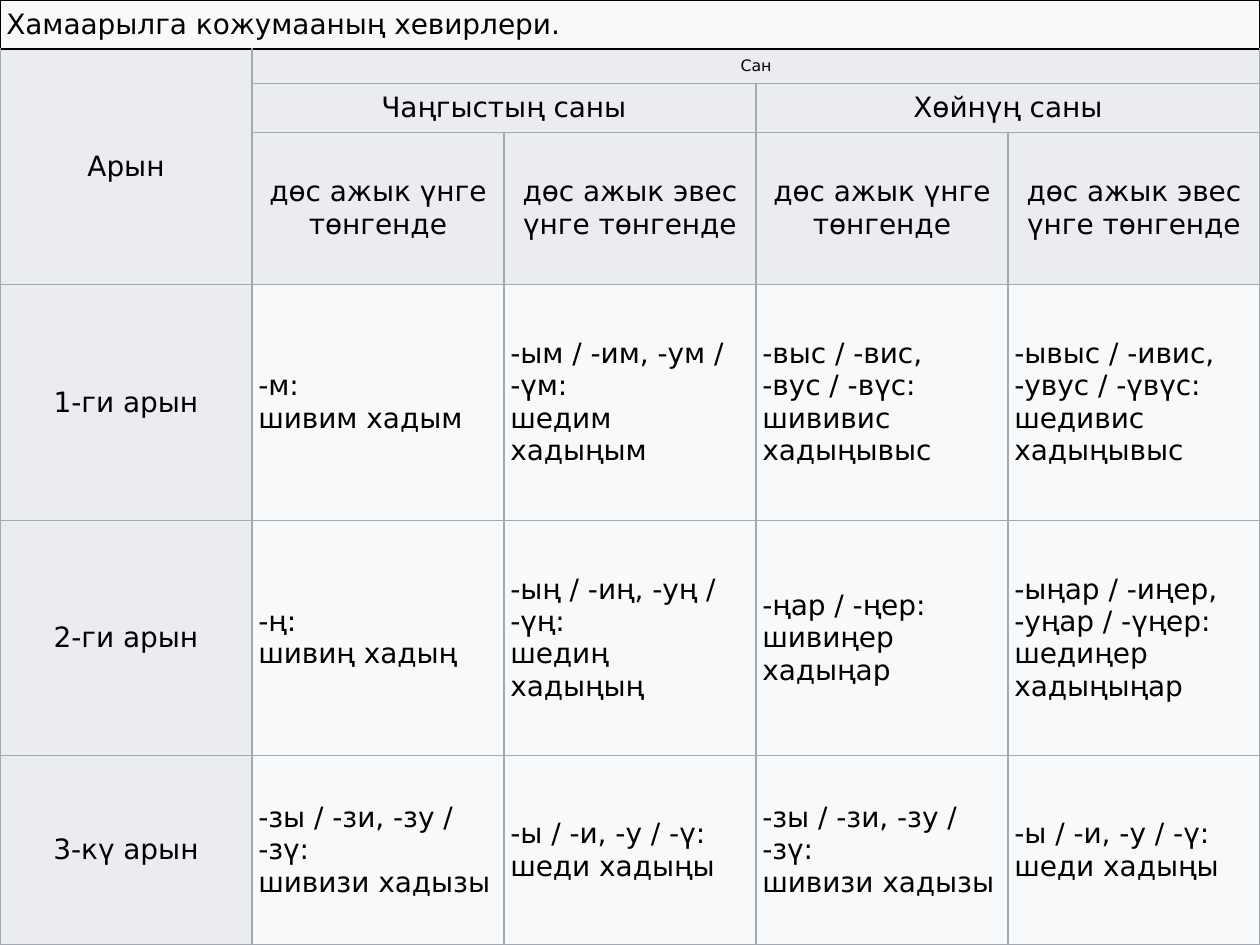
from lxml import etree
from pptx import Presentation
from pptx.dml.color import RGBColor
from pptx.enum.text import MSO_ANCHOR, PP_ALIGN
from pptx.oxml.ns import qn
from pptx.util import Inches, Pt

MIDDLE = MSO_ANCHOR.MIDDLE
LEFT, CENTER = PP_ALIGN.LEFT, PP_ALIGN.CENTER

# Content
CAPTION = "Хамаарылга кожумааның хевирлери."
PERSON = "Арын"
NUMBER = "Сан"
NUMBERS = ["Чаңгыстың саны", "Хөйнүң саны"]
STEMS = ["дөс ажык үнге төнгенде", "дөс ажык эвес үнге төнгенде"]
FORMS = [
    ("1-ги арын", [
        ("-м:", "шивим хадым"),
        ("-ым / -им, -ум / -үм:", "шедим хадыңым"),
        ("-выс / -вис, -вус / -вүс:", "шививис хадыңывыс"),
        ("-ывыс / -ивис, -увус / -үвүс:", "шедивис хадыңывыс"),
    ]),
    ("2-ги арын", [
        ("-ң:", "шивиң хадың"),
        ("-ың / -иң, -уң / -үң:", "шедиң хадыңың"),
        ("-ңар / -ңер:", "шивиңер хадыңар"),
        ("-ыңар / -иңер, -уңар / -үңер:", "шедиңер хадыңыңар"),
    ]),
    ("3-кү арын", [
        ("-зы / -зи, -зу / -зү:", "шивизи хадызы"),
        ("-ы / -и, -у / -ү:", "шеди хадыңы"),
    ] * 2),
]

# Theme and layout
THEME = {
    "font": "DejaVu Sans", "size": 16, "small": 9, "text": "000000",
    "background": "E3DED1", "header": "EAECF0", "body": "F8F9FA",
    "grid": ("A2A9B1", 0.75), "frame": ("000000", 1),
}
COLUMN_WIDTH, COLUMN_COUNT = 2, 5
ROW_HEIGHTS = [0.39, 0.27, 0.39, 1.21, 1.87, 1.87, 1.5]
MARGIN_X, MARGIN_Y = 0.05, 0.02


def draw_borders(cell, row):
    """Frame the caption row in black and rule the others in grey."""
    for side in ("L", "R", "T", "B"):
        framed = row == 0 or (row == 1 and side == "T")
        color, width = THEME["frame" if framed else "grid"]
        line = etree.SubElement(cell._tc.get_or_add_tcPr(), qn(f"a:ln{side}"), w=str(Pt(width)))
        fill = etree.SubElement(line, qn("a:solidFill"))
        etree.SubElement(fill, qn("a:srgbClr"), val=color)


def fill_cell(table, row, col, lines, rows=1, cols=1, fill="header", align=CENTER, size="size"):
    cell = table.cell(row, col)
    if rows * cols > 1:
        cell.merge(table.cell(row + rows - 1, col + cols - 1))
    cell.fill.solid()
    cell.fill.fore_color.rgb = RGBColor.from_string(THEME[fill])
    cell.vertical_anchor = MIDDLE
    cell.margin_left = cell.margin_right = Inches(MARGIN_X)
    cell.margin_top = cell.margin_bottom = Inches(MARGIN_Y)
    paragraph = cell.text_frame.paragraphs[0]
    paragraph.alignment = align
    for index, text in enumerate(lines):
        if index:
            paragraph.add_line_break()
        run = paragraph.add_run()
        run.text = text
        run.font.name = THEME["font"]
        run.font.size = Pt(THEME[size])
        run.font.bold = False
        run.font.color.rgb = RGBColor.from_string(THEME["text"])


def main():
    deck = Presentation()
    deck.slide_width, deck.slide_height = Inches(10), Inches(7.5)
    slide = deck.slides.add_slide(deck.slide_layouts[6])
    slide.background.fill.solid()
    slide.background.fill.fore_color.rgb = RGBColor.from_string(THEME["background"])

    # Table grid
    table = slide.shapes.add_table(
        len(ROW_HEIGHTS), COLUMN_COUNT, 0, 0,
        Inches(COLUMN_WIDTH * COLUMN_COUNT), Inches(sum(ROW_HEIGHTS))).table
    table.first_row = table.horz_banding = False
    for column in table.columns:
        column.width = Inches(COLUMN_WIDTH)
    for row, height in enumerate(ROW_HEIGHTS):
        table.rows[row].height = Inches(height)
        for col in range(COLUMN_COUNT):
            draw_borders(table.cell(row, col), row)

    # Caption and headers
    fill_cell(table, 0, 0, [CAPTION], cols=COLUMN_COUNT, fill="body", align=LEFT)
    fill_cell(table, 1, 0, [PERSON], rows=3)
    fill_cell(table, 1, 1, [NUMBER], cols=COLUMN_COUNT - 1, size="small")
    for group, number in enumerate(NUMBERS):
        first = 1 + group * len(STEMS)
        fill_cell(table, 2, first, [number], cols=len(STEMS))
        for offset, stem in enumerate(STEMS):
            fill_cell(table, 3, first + offset, [stem])

    # Forms by person
    for row, (person, forms) in enumerate(FORMS, start=4):
        fill_cell(table, row, 0, [person])
        for col, form in enumerate(forms, start=1):
            fill_cell(table, row, col, form, fill="body", align=LEFT)

    deck.save("out.pptx")


if __name__ == "__main__":
    main()
